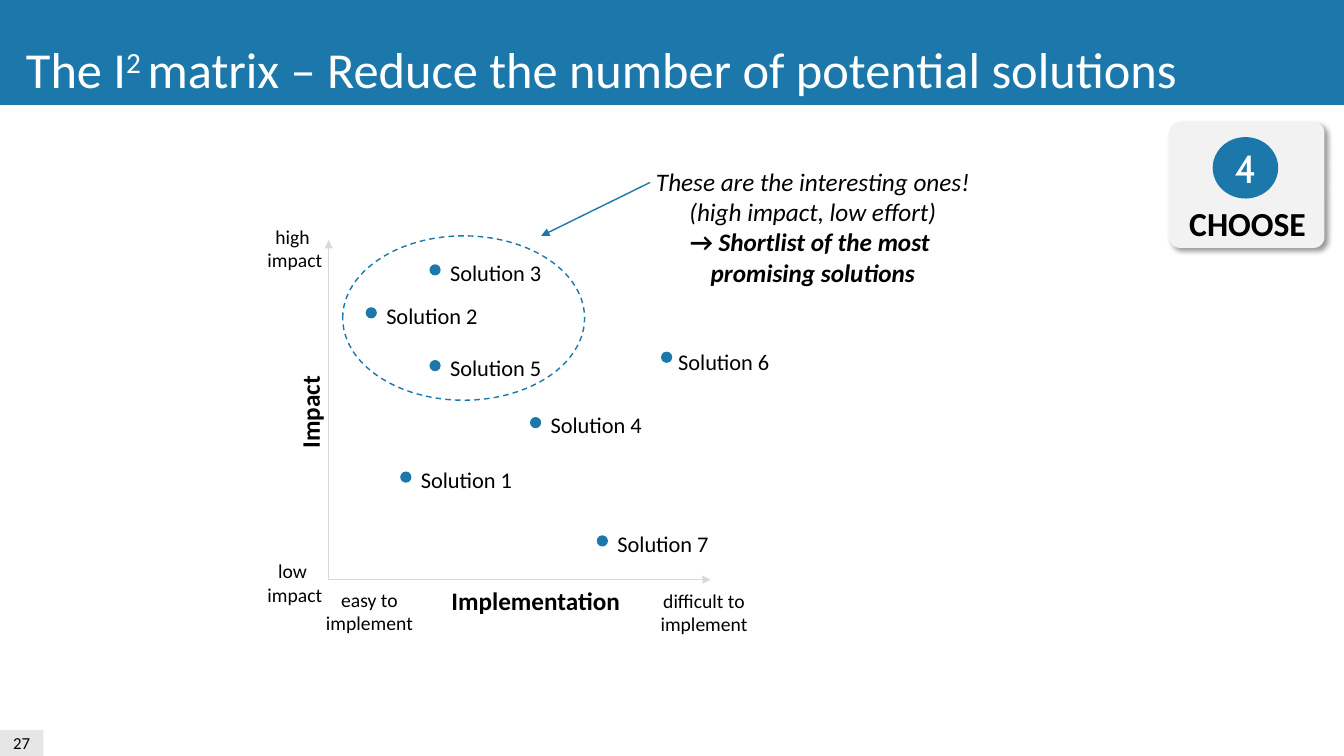
"""Build the impact / implementation matrix slide."""
from lxml import etree
from pptx import Presentation
from pptx.dml.color import RGBColor
from pptx.enum.dml import MSO_LINE
from pptx.enum.shapes import MSO_CONNECTOR, MSO_SHAPE
from pptx.enum.text import MSO_ANCHOR, MSO_AUTO_SIZE, PP_ALIGN
from pptx.oxml import parse_xml
from pptx.oxml.ns import nsdecls, qn
from pptx.util import Pt

RECT, ROUND, OVAL = MSO_SHAPE.RECTANGLE, MSO_SHAPE.ROUNDED_RECTANGLE, MSO_SHAPE.OVAL
STRAIGHT, DASH = MSO_CONNECTOR.STRAIGHT, MSO_LINE.DASH
LEFT, CENTER = PP_ALIGN.LEFT, PP_ALIGN.CENTER
TOP, MIDDLE = MSO_ANCHOR.TOP, MSO_ANCHOR.MIDDLE
GROW = MSO_AUTO_SIZE.SHAPE_TO_FIT_TEXT

THEME = {
    "font": "Calibri", "badge_font": "Cabin",
    "blue": "1C78AB", "grey": "E7E6E6", "axis": "D9D9D9", "badge": "F2F2F2",
    "white": "FFFFFF", "black": "000000",
    "title": 36, "number": 28, "step": 24, "heading": 18,
    "label": 16, "scale": 14, "page": 12,
}

TITLE = [[("The I", ""), ("2 ", "^"),
          ("matrix – Reduce the number of potential solutions", "")]]
CALLOUT = [
    [("These are the interesting ones!", "i")],
    [("(high impact, low effort)", "i")],
    [("→", "b"), (" Shortlist of the most \vpromising solutions", "bi")],
]
SCALE_ENDS = [
    ("high ", "impact", 183.6, 157, 54),
    ("low ", "impact", 183.6, 396, 54),
    ("easy to", "implement", 225.4, 416.2, 77),
    ("difficult to", "implement", 464.4, 416.9, 77),
]
LABEL_SHIFT = (7.6, -7.5)
SOLUTIONS = [
    ("Solution 2", (261.2, 219.5), LABEL_SHIFT),
    ("Solution 5", (306.8, 257.2), LABEL_SHIFT),
    ("Solution 3", (306.8, 188.8), LABEL_SHIFT),
    ("Solution 4", (378.6, 297.9), LABEL_SHIFT),
    ("Solution 6", (472.2, 251.2), (5.1, -6.4)),
    ("Solution 1", (285.9, 336.8), LABEL_SHIFT),
    ("Solution 7", (426.3, 382.4), LABEL_SHIFT),
]
DOT = 8
ORIGIN, AXIS_TOP, AXIS_RIGHT = (234.8, 414), 171.4, 507.6


def rgb(name):
    return RGBColor.from_string(THEME[name])


def write(sp, lines, size, color="black", align=LEFT, anchor=TOP, font="font"):
    tf = sp.text_frame
    tf.vertical_anchor = anchor
    for i, line in enumerate(lines):
        p = tf.add_paragraph() if i else tf.paragraphs[0]
        p.text = "".join(text for text, _ in line) if len(line) == 1 else ""
        p.alignment = align
        if len(line) > 1:
            for text, style in line:
                add_run(p, text)
                style_runs(p.runs[-1:] if "\v" not in text else p.runs[-2:],
                           style, size, color, font)
        else:
            style_runs(p.runs, line[0][1], size, color, font)


def add_run(p, text):
    for i, part in enumerate(text.split("\v")):
        if i:
            p.add_line_break()
        p.add_run().text = part


def style_runs(runs, style, size, color, font):
    for r in runs:
        r.font.name, r.font.size = THEME[font], Pt(THEME[size])
        r.font.color.rgb = rgb(color)
        r.font.bold, r.font.italic = "b" in style, "i" in style
        if "^" in style:
            r.font._element.set("baseline", "30000")


def add_text(s, box, lines, size, color="black", align=LEFT, wrap=False):
    sp = s.shapes.add_textbox(*map(Pt, box))
    sp.text_frame.word_wrap = wrap
    sp.text_frame.auto_size = GROW
    write(sp, lines, size, color, align)
    return sp


def add_shape(s, kind, box, fill=None):
    sp = s.shapes.add_shape(kind, *map(Pt, box))
    sp.shadow.inherit = False
    sp.line.fill.background()
    if fill:
        sp.fill.solid()
        sp.fill.fore_color.rgb = rgb(fill)
    else:
        sp.fill.background()
    return sp


def add_arrow(s, start, end, color):
    cx = s.shapes.add_connector(STRAIGHT, *map(Pt, (*start, *end)))
    cx.line.color.rgb, cx.line.width = rgb(color), Pt(1)
    etree.SubElement(cx.line._get_or_add_ln(), qn("a:tailEnd"), type="triangle")
    etree.SubElement(cx._element.spPr, qn("a:effectLst"))


def add_header(s):
    add_shape(s, RECT, (0, -0.7, 960.5, 75.6), "blue")
    add_text(s, (11.5, 23.8, 849.6, 51), TITLE, "title", "white")
    page = add_shape(s, RECT, (0, 521.3, 31, 18.7), "grey")
    write(page, [[("27", "")]], "page", align=CENTER, anchor=MIDDLE)


def add_matrix(s):
    ring = add_shape(s, OVAL, (244.8, 168.5, 172.8, 117.4))
    ring.line.color.rgb, ring.line.width = rgb("blue"), Pt(1)
    ring.line.dash_style = DASH
    add_arrow(s, ORIGIN, (ORIGIN[0], AXIS_TOP), "axis")
    add_arrow(s, ORIGIN, (AXIS_RIGHT, ORIGIN[1]), "axis")
    impact = add_text(s, (100.1, 278, 242.6, 29), [[("Impact ", "b")]],
                      "heading", align=CENTER, wrap=True)
    impact.rotation = 270
    add_text(s, (245.5, 414.7, 274.3, 29), [[("Implementation", "b")]],
             "heading", align=CENTER, wrap=True)
    for first, second, x, y, width in SCALE_ENDS:
        add_text(s, (x, y, width, 41), [[(first, "")], [(second, "")]],
                 "scale", align=CENTER)
    for name, (x, y), (dx, dy) in SOLUTIONS:
        add_shape(s, OVAL, (x, y, DOT, DOT), "blue")
        add_text(s, (x + dx, y + dy, 80.6, 26.6), [[(name, "")]], "label")


def add_callout(s):
    add_text(s, (460, 115.2, 241.2, 94.3), CALLOUT, "heading", align=CENTER)
    add_arrow(s, (464.4, 130.3), (386.6, 168.5), "blue")


def add_badge(s):
    card = add_shape(s, ROUND, (835.2, 87.1, 110.9, 90), "badge")
    card.adjustments[0] = 0.087
    effects = card._element.spPr.find(qn("a:effectLst"))
    effects.append(parse_xml(
        f'<a:outerShdw {nsdecls("a")} blurRad="{Pt(4)}" dist="{Pt(3)}" '
        f'dir="2700000" algn="tl" rotWithShape="0"><a:srgbClr val="{THEME["black"]}">'
        '<a:alpha val="40000"/></a:srgbClr></a:outerShdw>'))
    disc = add_shape(s, OVAL, (866.2, 97.9, 46.8, 43.9), "blue")
    write(disc, [[("4", "")]], "number", "white", CENTER, MIDDLE, "badge_font")
    add_text(s, (842.4, 141.1, 98.6, 36), [[("CHOOSE", "b")]], "step")


def main():
    prs = Presentation()
    prs.slide_width, prs.slide_height = Pt(960), Pt(540)
    s = prs.slides.add_slide(prs.slide_layouts[6])
    add_header(s)
    add_matrix(s)
    add_callout(s)
    add_badge(s)
    prs.save("out.pptx")


if __name__ == "__main__":
    main()
